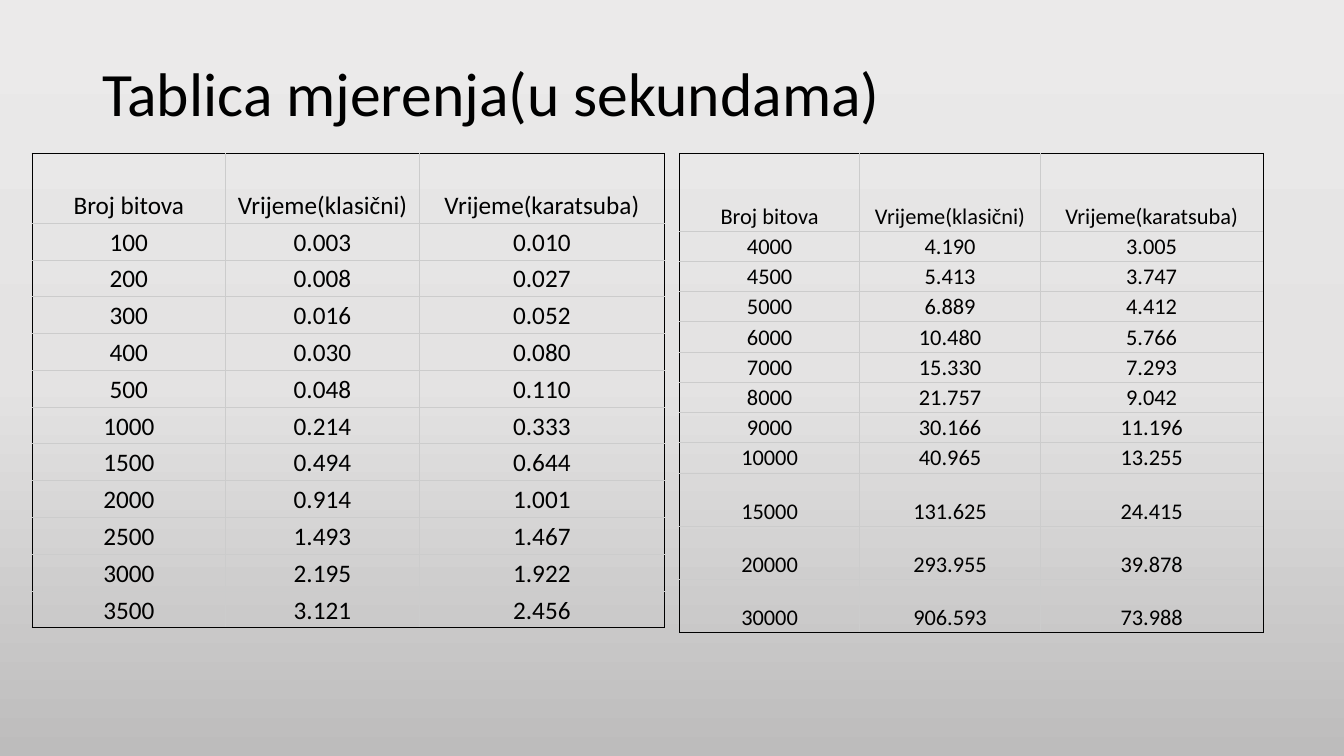
"""Build a slide with two tables of timings in seconds."""
from copy import deepcopy
from dataclasses import dataclass

from lxml import etree
from pptx import Presentation
from pptx.dml.color import RGBColor
from pptx.enum.text import MSO_ANCHOR, PP_ALIGN
from pptx.oxml.ns import qn
from pptx.slide import Slide
from pptx.table import _Cell
from pptx.text.text import TextFrame
from pptx.util import Pt

LEFT, CENTER = PP_ALIGN.LEFT, PP_ALIGN.CENTER
MIDDLE, BOTTOM = MSO_ANCHOR.MIDDLE, MSO_ANCHOR.BOTTOM
FONT = "Calibri"
COLORS = {"ink": "000000", "grid": "CCCCCC",
          "top": "EBEAEA", "mid": "E4E3E3", "base": "BDBCBC"}
HEAD = ("Broj bitova", "Vrijeme(klasični)", "Vrijeme(karatsuba)")


@dataclass(frozen=True)
class Grid:
    left: float
    top: float
    cols: tuple[float, ...]
    rows: tuple[float, ...]
    size: float
    side: float
    edge: float
    data: tuple[tuple[str, ...], ...]


GRIDS = (
    Grid(22.9, 109.4, (138.3, 138.3, 175.2), (50,) + (26.3,) * 11, 18, 2.16, 1.44, (
        ("100", "0.003", "0.010"),
        ("200", "0.008", "0.027"),
        ("300", "0.016", "0.052"),
        ("400", "0.030", "0.080"),
        ("500", "0.048", "0.110"),
        ("1000", "0.214", "0.333"),
        ("1500", "0.494", "0.644"),
        ("2000", "0.914", "1.001"),
        ("2500", "1.493", "1.467"),
        ("3000", "2.195", "1.922"),
        ("3500", "3.121", "2.456"),
    )),
    Grid(485.3, 109.4, (128.9, 128.9, 159.1), (55.7,) + (21.6,) * 8 + (37.9,) * 3,
         16, 1.44, 0.72, (
        ("4000", "4.190", "3.005"),
        ("4500", "5.413", "3.747"),
        ("5000", "6.889", "4.412"),
        ("6000", "10.480", "5.766"),
        ("7000", "15.330", "7.293"),
        ("8000", "21.757", "9.042"),
        ("9000", "30.166", "11.196"),
        ("10000", "40.965", "13.255"),
        ("15000", "131.625", "24.415"),
        ("20000", "293.955", "39.878"),
        ("30000", "906.593", "73.988"),
    )),
)


def write(frame: TextFrame, text: str, *, size: float, align: PP_ALIGN = LEFT,
          space: float = 1.0) -> None:
    line = frame.paragraphs[0]
    line.alignment = align
    line.line_spacing = space
    run = line.add_run()
    run.text = text
    run.font.name = FONT
    run.font.size = Pt(size)
    run.font.color.rgb = RGBColor.from_string(COLORS["ink"])


def border(cell: _Cell, outer: dict[str, bool]) -> None:
    props = cell._tc.get_or_add_tcPr()
    for side, dark in outer.items():
        line = etree.SubElement(props, qn(f"a:ln{side}"), w=str(Pt(0.6)))
        fill = etree.SubElement(line, qn("a:solidFill"))
        etree.SubElement(fill, qn("a:srgbClr"), val=COLORS["ink" if dark else "grid"])


def draw(slide: Slide, grid: Grid) -> None:
    lines = (HEAD,) + grid.data
    table = slide.shapes.add_table(
        len(lines), len(HEAD), Pt(grid.left), Pt(grid.top),
        Pt(sum(grid.cols)), Pt(sum(grid.rows))).table
    table.first_row = table.horz_banding = False
    for col, width in zip(table.columns, grid.cols):
        col.width = Pt(width)
    for row, height in zip(table.rows, grid.rows):
        row.height = Pt(height)
    for r, line in enumerate(lines):
        for c, text in enumerate(line):
            cell = table.cell(r, c)
            border(cell, {"L": c == 0, "R": c == len(HEAD) - 1,
                          "T": r == 0, "B": r == len(lines) - 1})
            cell.fill.background()
            cell.vertical_anchor = BOTTOM
            cell.margin_left = cell.margin_right = Pt(grid.side)
            cell.margin_top = cell.margin_bottom = Pt(grid.edge)
            write(cell.text_frame, text, size=grid.size, align=CENTER)


def shade(slide: Slide) -> None:
    fill = slide.background.fill
    fill.gradient()
    fill.gradient_angle = 270
    stops = slide.element.find(".//" + qn("a:gsLst"))
    stops.append(deepcopy(stops[0]))
    for stop, name, place in zip(fill.gradient_stops, ("top", "mid", "base"), (0, 0.5, 1)):
        stop.color.rgb = RGBColor.from_string(COLORS[name])
        stop.position = place


def main() -> None:
    deck = Presentation()
    deck.slide_width, deck.slide_height = Pt(960), Pt(540)
    slide = deck.slides.add_slide(deck.slide_layouts[6])
    shade(slide)
    frame = slide.shapes.add_textbox(Pt(66), Pt(28.8), Pt(828), Pt(80.6)).text_frame
    frame.word_wrap = True
    frame.vertical_anchor = MIDDLE
    write(frame, "Tablica mjerenja(u sekundama)", size=44, space=0.9)
    for grid in GRIDS:
        draw(slide, grid)
    deck.save("out.pptx")


if __name__ == "__main__":
    main()
